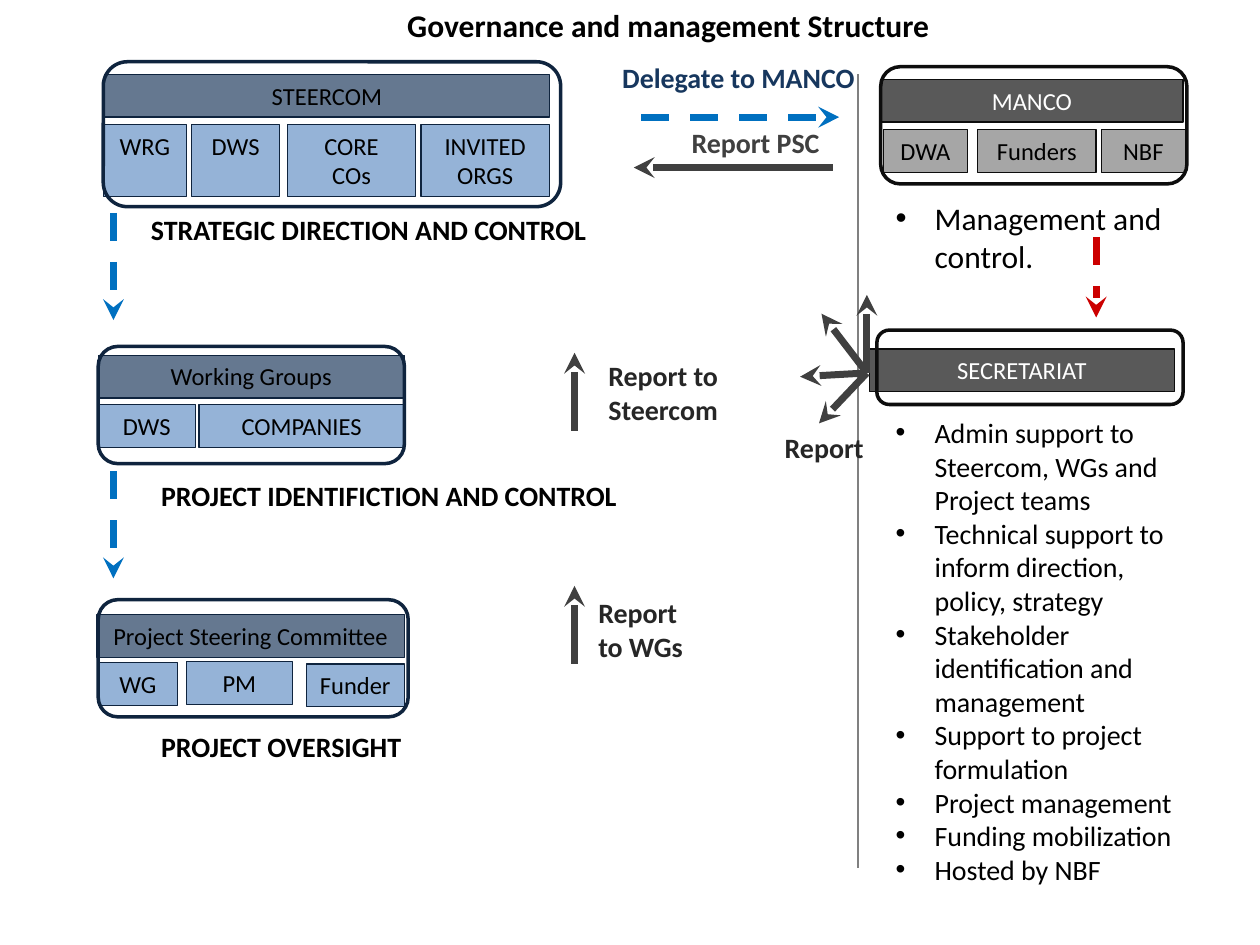
from dataclasses import dataclass

from lxml.etree import SubElement
from pptx import Presentation
from pptx.dml.color import RGBColor
from pptx.enum.dml import MSO_LINE
from pptx.enum.shapes import MSO_CONNECTOR, MSO_SHAPE
from pptx.enum.text import MSO_ANCHOR, PP_ALIGN
from pptx.oxml.ns import qn
from pptx.util import Inches, Pt

COLUMNS, ROWS = 100, 75
WIDTH, HEIGHT = Inches(10), Inches(7.5)
FONT = "Calibri"
BLACK, WHITE = "000000", "FFFFFF"
BLUE, CHARCOAL, RED, INK = "0070C0", "404040", "CC0000", "262626"


@dataclass
class Box:
    """A region of the slide, measured in grid columns and rows."""

    left: float
    top: float
    width: float
    height: float

    def inner(self, x, y, width, height):
        """Return a box placed relative to this one."""
        return Box(self.left + x, self.top + y, width, height)

    def emu(self):
        """Return left, top, width and height in slide units."""
        return (*grid_point(self.left, self.top), *grid_point(self.width, self.height))


@dataclass
class Palette:
    """The colours of one kind of committee."""

    header: str
    header_text: str
    member: str
    line: str
    opacity: int = 100


PARTNERS = Palette("254061", BLACK, "95B3D7", "0F243E", 70)
MANAGERS = Palette("595959", WHITE, "A6A6A6", "0D0D0D")


def grid_point(column, row):
    """Turn a grid position into slide units."""
    return round(WIDTH * column / COLUMNS), round(HEIGHT * row / ROWS)


def rgb(color):
    """Turn a hex string into a colour."""
    return RGBColor.from_string(color)


def write(shape, lines, size, color, bold=False, align=PP_ALIGN.LEFT, bulleted=False):
    """Fill a shape with one paragraph per line."""
    frame = shape.text_frame
    frame.word_wrap = True
    frame.vertical_anchor = MSO_ANCHOR.TOP
    frame.text = "\n".join(lines)
    for paragraph in frame.paragraphs:
        paragraph.alignment = align
        if bulleted:
            properties = paragraph._p.get_or_add_pPr()
            properties.set("marL", str(Inches(0.31)))
            properties.set("indent", str(-Inches(0.31)))
            SubElement(properties, qn("a:buFont"), typeface="Arial")
            SubElement(properties, qn("a:buChar"), char="•")
        for run in paragraph.runs:
            run.font.name, run.font.size, run.font.bold = FONT, Pt(size), bold
            run.font.color.rgb = rgb(color)


def label(slide, box, lines, size=16, color=BLACK, bold=True, **style):
    """Place a text box."""
    write(slide.shapes.add_textbox(*box.emu()), lines, size, color, bold, **style)


def outline(slide, kind, box, color, weight):
    """Place an unfilled shape with a coloured line."""
    shape = slide.shapes.add_shape(kind, *box.emu())
    shape.shadow.inherit = False
    shape.fill.background()
    shape.line.color.rgb = rgb(color)
    shape.line.width = Pt(weight)
    return shape


def cell(slide, box, text, fill, line, color=BLACK, opacity=100):
    """Place a filled rectangle with centred text."""
    shape = outline(slide, MSO_SHAPE.RECTANGLE, box, line, 0.75)
    shape.fill.solid()
    shape.fill.fore_color.rgb = rgb(fill)
    if opacity < 100:
        shade = shape._element.spPr.find(qn("a:solidFill"))[0]
        SubElement(shade, qn("a:alpha"), val=str(opacity * 1000))
    write(shape, text.split("\n"), 14, color, align=PP_ALIGN.CENTER)


def line(slide, start, end, color, weight=4, dashed=False, arrow=True):
    """Draw a straight line, by default with an arrowhead at its end."""
    connector = slide.shapes.add_connector(
        MSO_CONNECTOR.STRAIGHT, *grid_point(*start), *grid_point(*end))
    connector.line.color.rgb = rgb(color)
    connector.line.width = Pt(weight)
    if dashed:
        connector.line.dash_style = MSO_LINE.DASH
    if arrow:
        SubElement(connector.line._get_or_add_ln(), qn("a:tailEnd"), type="stealth")
    SubElement(connector._element.spPr, qn("a:effectLst"))


def committee(slide, box, palette, title, header, members=(), member_height=3.4):
    """Draw a framed body: header (x, y, width) and members (name, x, y, width)."""
    x, y, width = header
    cell(slide, box.inner(x, y, width, 3.4), title, palette.header, palette.line,
         palette.header_text, palette.opacity)
    for name, x, y, width in members:
        cell(slide, box.inner(x, y, width, member_height), name, palette.member, palette.line)
    outline(slide, MSO_SHAPE.ROUNDED_RECTANGLE, box, palette.line, 2)


def partner_column(slide, box):
    """Draw the three partner bodies, their roles and the delegation arrows."""
    committee(slide, box.inner(0.5, 0, 36.3, 11.5), PARTNERS, "STEERCOM", (0.1, 1, 35.3),
              [("WRG", 0, 5, 6.6), ("DWS", 7, 5, 7),
               ("CORE\nCOs", 14.6, 5, 10.2), ("INVITED ORGS", 25.2, 5, 10.2)], 5.7)
    committee(slide, box.inner(0.1, 22.6, 24.3, 9.3), PARTNERS, "Working Groups",
              (0, 0.7, 24.3), [("DWS", 0, 4.6, 7.7), ("COMPANIES", 8, 4.6, 16.3)])
    committee(slide, box.inner(0.1, 42.7, 24.6, 9.3), PARTNERS, "Project Steering Committee",
              (-0.1, 1.2, 24.4),
              [("WG", 0, 5, 6.3), ("PM", 7, 4.9, 8.4), ("Funder", 16.5, 5.1, 7.8)])
    for role, x, y in (("STRATEGIC DIRECTION AND CONTROL", 3.3, 11.5),
                       ("PROJECT IDENTIFICTION AND CONTROL", 4.1, 32.6),
                       ("PROJECT OVERSIGHT", 4.1, 52.5)):
        label(slide, box.inner(x, y, 58, 3.7), [role])
    shaft = box.left + 1.3
    for y in (box.top + 12, box.top + 32.5):
        line(slide, (shaft, y), (shaft, y + 8.5), BLUE, dashed=True)


def reporting_column(slide, box):
    """Draw the arrows and labels between the two sides."""
    left, top = box.left, box.top
    label(slide, box.inner(2.8, 0, 20.6, 3.7), ["Delegate to MANCO"], color="17375E")
    line(slide, (left + 5.3, top + 5), (left + 21, top + 5), BLUE, dashed=True)
    label(slide, box.inner(8.3, 5.2, 14, 3.7), ["Report PSC"], color=CHARCOAL)
    line(slide, (left + 20.5, top + 9), (left + 4.7, top + 9), CHARCOAL)
    for text, x, y, width, tip in (("Report to Steercom", 1.7, 23.7, 11.9, 23.7),
                                   ("Report to WGs", 0.9, 42.5, 9.6, 42.2)):
        label(slide, box.inner(x, y, width, 6.4), [text], color=INK)
        line(slide, (left, top + tip + 6.2), (left, top + tip), CHARCOAL)


def management_column(slide, box):
    """Draw the management body, the secretariat and their duties."""
    committee(slide, box.inner(0.3, 0, 24.3, 9.3), MANAGERS, "MANCO", (0, 1, 24),
              [("DWA", 0.2, 5, 6.7), ("Funders", 7.7, 5, 9.4), ("NBF", 17.5, 5, 6.7)])
    label(slide, box.inner(0.5, 10, 26.1, 7.1), ["Management and control."],
          size=18, bold=False, bulleted=True)
    shaft = box.left + 17.4
    line(slide, (shaft, box.top + 13.5), (shaft, box.top + 19.9), RED, dashed=True)
    committee(slide, box.inner(0, 20.9, 24.3, 5.9), MANAGERS, "SECRETARIAT", (-0.6, 1.5, 24.2))
    duties = ["Admin support to Steercom, WGs and Project teams",
              "Technical support to inform direction, policy, strategy",
              "Stakeholder identification and management",
              "Support to project formulation",
              "Project management", "Funding mobilization", "Hosted by NBF"]
    label(slide, box.inner(0.5, 27.2, 26, 38.7), duties, bold=False, bulleted=True)


def report_fan(slide, box):
    """Draw the arrows that spread out from the secretariat."""
    hub = (box.left + 7.5, box.top + 6.2)
    for x, y in ((7.5, 0), (3.9, 1.5), (2.2, 6.5), (3.7, 10.2)):
        line(slide, hub, (box.left + x, box.top + y), CHARCOAL)
    label(slide, box.inner(0, 10.3, 9.6, 3.7), ["Report"], color=INK)


def main():
    """Build the slide and save it."""
    deck = Presentation()
    deck.slide_width, deck.slide_height = WIDTH, HEIGHT
    slide = deck.slides.add_slide(deck.slide_layouts[6])
    label(slide, Box(30.9, 0, 44.3, 4), ["Governance and management Structure"],
          size=18, align=PP_ALIGN.CENTER)
    line(slide, (68.1, 5.9), (68.1, 68.9), "808080", weight=0.75, arrow=False)
    partner_column(slide, Box(7.7, 4.9, 60, 57))
    reporting_column(slide, Box(45.6, 4.3, 23, 50))
    management_column(slide, Box(69.6, 5.3, 27, 66))
    report_fan(slide, Box(61.3, 23.4, 9.6, 14))
    deck.save("out.pptx")


if __name__ == "__main__":
    main()
